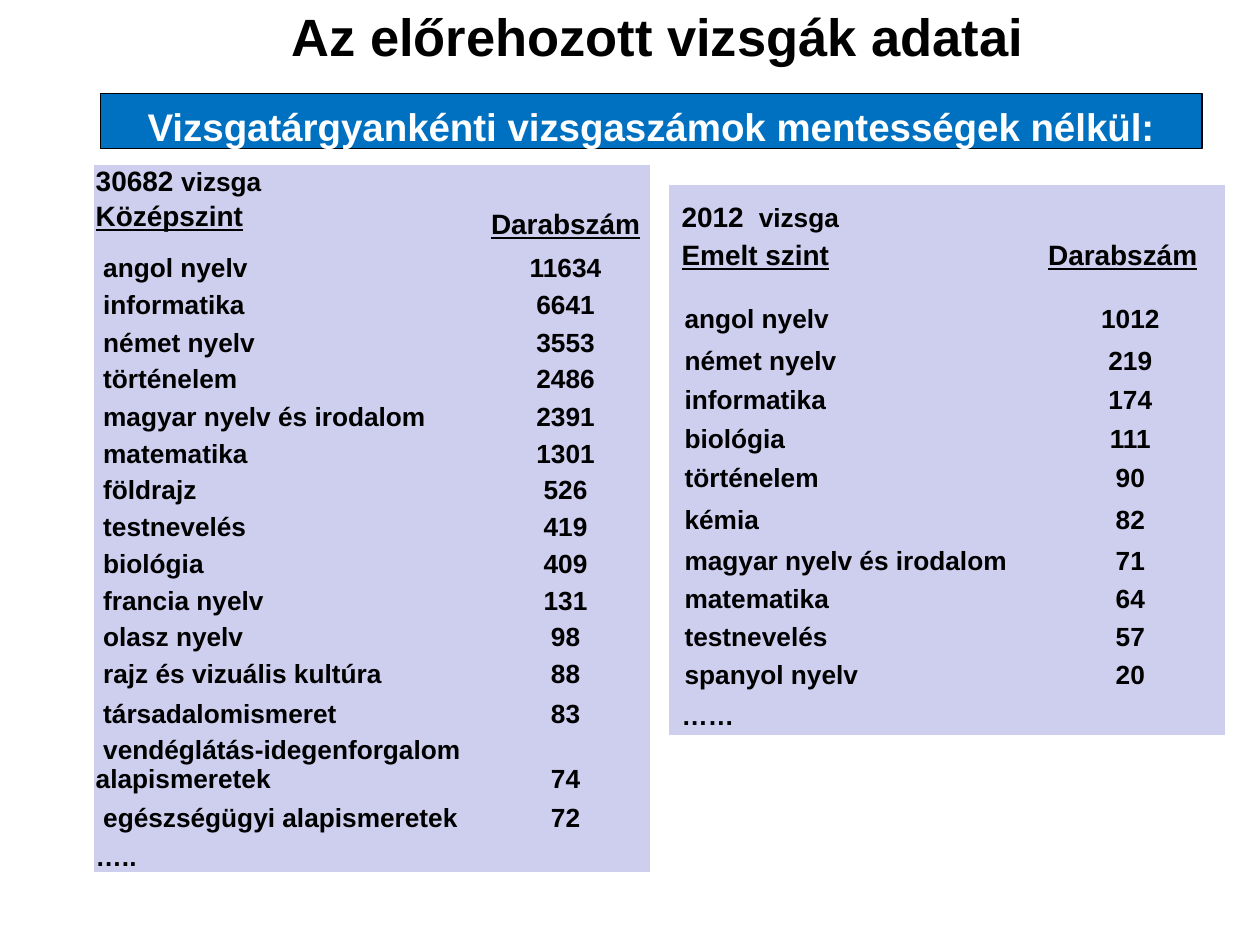
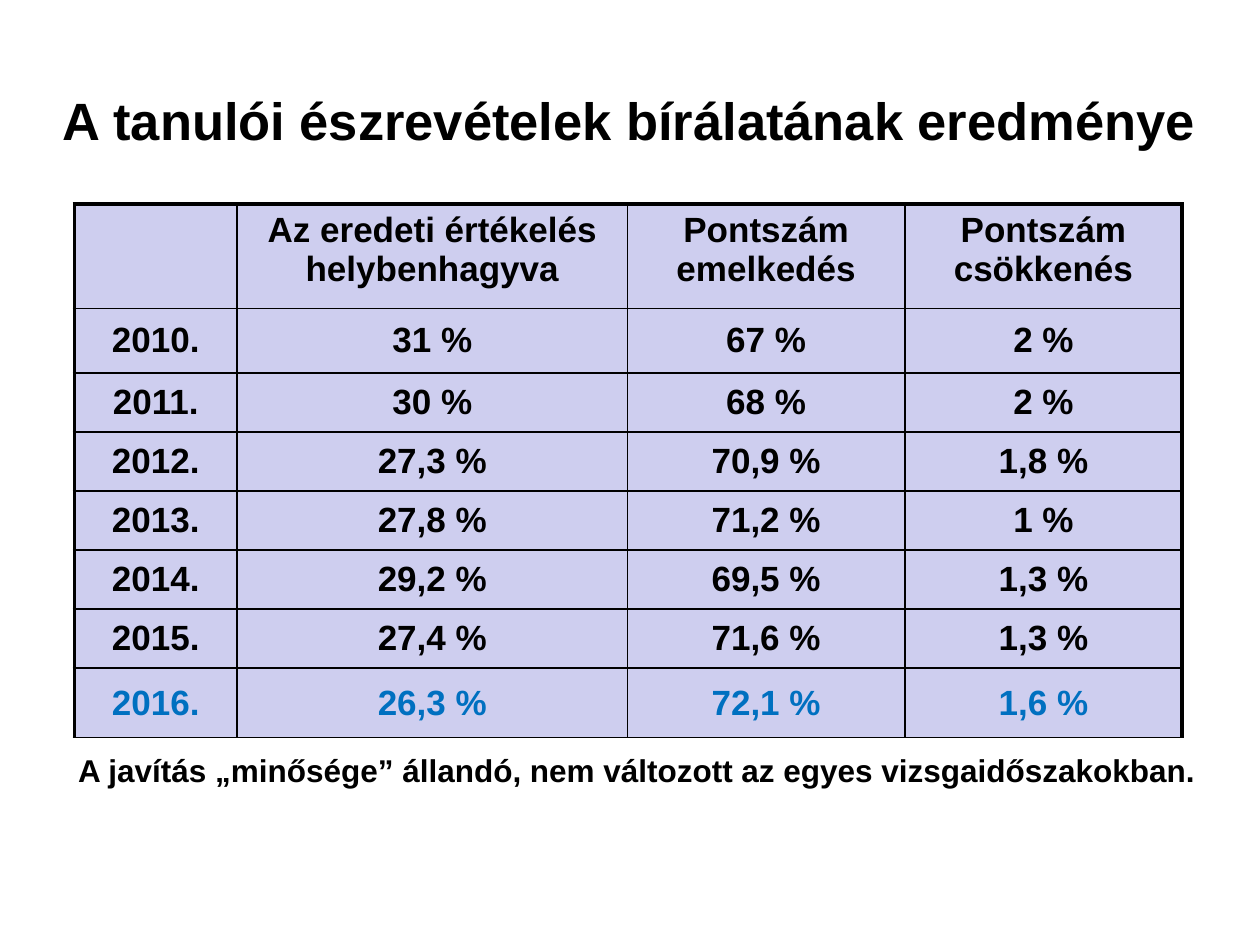
from lxml import etree
from pptx import Presentation
from pptx import util as u
from pptx.dml import color
from pptx.enum import shapes, text
from pptx.oxml import ns

COLORS = {"ink": "000000", "blue": "0070C0", "lilac": "CECEEF", "white": "FFFFFF"}
NO_STYLE = "{2D5ABB26-0587-4C30-8999-92F81FD0307C}"
CENTER = text.PP_ALIGN.CENTER
LEFT = text.PP_ALIGN.LEFT
TOP = text.MSO_ANCHOR.TOP
MIDDLE = text.MSO_ANCHOR.MIDDLE
BOTTOM = text.MSO_ANCHOR.BOTTOM
DEFAULT_INSETS = (0.25, 0.13, 0.25, 0.13)
TIGHT = (0.03, 0.03, 0.03, 0)


def rgb(name):
    return color.RGBColor.from_string(COLORS[name])


class Deck:
    font = "Arial"

    def __init__(self):
        self.prs = Presentation()
        self.prs.slide_width, self.prs.slide_height = u.Cm(25.4), u.Cm(19.05)
        self.s = None

    def slide(self):
        self.s = self.prs.slides.add_slide(self.prs.slide_layouts[6])

    def run(self, p, words, size, ink="ink", underline=False):
        r = p.add_run()
        r.text = words
        f = r.font
        f.name, f.size, f.bold = self.font, u.Pt(size), True
        f.color.rgb = rgb(ink)
        if underline:
            f.underline = True

    def line(self, p, words, size, ink="ink", align=CENTER, underline=False):
        p.alignment = align
        self.run(p, words, size, ink, underline)

    def textbox(self, box, words, size, anchor=TOP, spacing=None):
        tf = self.s.shapes.add_textbox(*map(u.Cm, box)).text_frame
        tf.word_wrap = True
        tf.vertical_anchor = anchor
        p = tf.paragraphs[0]
        p.line_spacing = spacing
        self.line(p, words, size)

    def title(self, box, words):
        self.textbox(box, words, 30, MIDDLE)

    def banner(self, box, words):
        sp = self.s.shapes.add_shape(shapes.MSO_SHAPE.RECTANGLE, *map(u.Cm, box))
        sp.shadow.inherit = False
        sp.fill.solid()
        sp.fill.fore_color.rgb = rgb("blue")
        sp.line.color.rgb = rgb("ink")
        sp.line.width = u.Pt(0.75)
        tf = sp.text_frame
        tf.word_wrap = True
        tf.vertical_anchor = TOP
        tf.margin_top = u.Cm(0.2)
        self.line(tf.paragraphs[0], words, 22, "white")

    def table(self, x, y, widths, heights):
        frame = self.s.shapes.add_table(
            len(heights), len(widths), u.Cm(x), u.Cm(y),
            u.Cm(sum(widths)), u.Cm(sum(heights)))
        tbl = frame.table
        tbl.first_row = tbl.horz_banding = False
        tbl._tbl.tblPr.find(ns.qn("a:tableStyleId")).text = NO_STYLE
        for column, width in zip(tbl.columns, widths):
            column.width = u.Cm(width)
        for row, height in zip(tbl.rows, heights):
            row.height = u.Cm(height)
        for cell in tbl.iter_cells():
            cell.fill.solid()
            cell.fill.fore_color.rgb = rgb("lilac")
            self.cell(cell, TIGHT, BOTTOM)
        return tbl

    def cell(self, cell, insets, anchor):
        cell.margin_left, cell.margin_top, cell.margin_right, cell.margin_bottom = map(u.Cm, insets)
        cell.vertical_anchor = anchor
        return cell.text_frame.paragraphs[0]

    def borders(self, cell, widths):
        tc_pr = cell._tc.get_or_add_tcPr()
        for i, (side, width) in enumerate(zip("LRTB", widths)):
            ln = etree.Element(ns.qn(f"a:ln{side}"), w=str(u.Pt(width)))
            fill = etree.SubElement(ln, ns.qn("a:solidFill"))
            etree.SubElement(fill, ns.qn("a:srgbClr"), val=COLORS["ink"])
            tc_pr.insert(i, ln)

    def subject_rows(self, tbl, first, subjects, indent):
        for i, (subject, count) in enumerate(subjects, first):
            name, number = tbl.cell(i, 0), tbl.cell(i, 1)
            name.margin_left = u.Cm(0.03 + indent)
            tf = name.text_frame
            for j, part in enumerate(subject.split("\n")):
                p = tf.add_paragraph() if j else tf.paragraphs[0]
                self.line(p, part, 15, align=LEFT)
            if j:
                name.margin_left = u.Cm(0.03)
                tf.paragraphs[0]._p.get_or_add_pPr().set("indent", str(u.Cm(indent)))
            self.line(number.text_frame.paragraphs[0], str(count), 15)

    def advanced_level(self, subjects):
        heights = [1.83, 1.17, 0.84, 0.79, 0.79, 0.79, 0.84, 0.84, 0.76, 0.76, 0.76, 0.91]
        tbl = self.table(13.49, 3.73, [7.39, 3.81], heights)
        p = self.cell(tbl.cell(0, 0), DEFAULT_INSETS, BOTTOM)
        self.line(p, "2012 ", 16, align=LEFT)
        self.run(p, " vizsga", 15)
        level = tbl.cell(0, 0).text_frame.add_paragraph()
        level.space_before = u.Pt(11)
        self.line(level, "Emelt szint", 16, align=LEFT, underline=True)
        count = self.cell(tbl.cell(0, 1), DEFAULT_INSETS, BOTTOM)
        self.line(count, "Darabszám", 16, align=LEFT, underline=True)
        for heading in (p, level, count):
            heading.line_spacing = 0.6
        self.subject_rows(tbl, 1, subjects, 0.28)
        p = self.cell(tbl.cell(len(heights) - 1, 0), DEFAULT_INSETS, BOTTOM)
        p.line_spacing = 0.45
        self.line(p, "……", 15, align=LEFT)

    def middle_level(self, subjects):
        heights = [0.61, 0.81, 0.86] + [0.74, 0.76] * 2 + [0.74] * 7 + [0.81, 0.74, 0.79, 0.79]
        tbl = self.table(1.9, 3.33, [7.8, 3.4], heights)
        tbl.cell(0, 1).merge(tbl.cell(1, 1))
        p = self.cell(tbl.cell(0, 0), TIGHT, TOP)
        self.line(p, "30682 ", 16, align=LEFT)
        self.run(p, "vizsga", 15)
        p = self.cell(tbl.cell(1, 0), TIGHT, TOP)
        self.line(p, "Középszint", 16, align=LEFT, underline=True)
        self.line(tbl.cell(0, 1).text_frame.paragraphs[0], "Darabszám", 16, underline=True)
        self.subject_rows(tbl, 2, subjects, 0.15)
        last = tbl.cell(len(heights) - 1, 0)
        self.line(last.text_frame.paragraphs[0], "…..", 15, align=LEFT)

    def review_grid(self, headings, years):
        rows = [headings] + [(f"{year}.", *(f"{v} %" for v in values)) for year, *values in years]
        heights = [2.11, 1.3] + [1.19] * 5 + [1.4]
        tbl = self.table(1.5, 4.11, [3.28, 7.87, 5.59, 5.59], heights)
        for i, row in enumerate(rows):
            for j, words in enumerate(row):
                cell = tbl.cell(i, j)
                p = self.cell(cell, DEFAULT_INSETS, MIDDLE if i else TOP)
                if words:
                    self.line(p, words, 20, "blue" if i == len(rows) - 1 else "ink")
                self.borders(cell, (2.25 if j == 0 else 1, 2.25 if j == len(row) - 1 else 1,
                                    2.25 if i == 0 else 1, 1))


ADVANCED = [
    ("angol nyelv", 1012), ("német nyelv", 219), ("informatika", 174),
    ("biológia", 111), ("történelem", 90), ("kémia", 82),
    ("magyar nyelv és irodalom", 71), ("matematika", 64),
    ("testnevelés", 57), ("spanyol nyelv", 20),
]
MIDDLE_LEVEL = [
    ("angol nyelv", 11634), ("informatika", 6641), ("német nyelv", 3553),
    ("történelem", 2486), ("magyar nyelv és irodalom", 2391),
    ("matematika", 1301), ("földrajz", 526), ("testnevelés", 419),
    ("biológia", 409), ("francia nyelv", 131), ("olasz nyelv", 98),
    ("rajz és vizuális kultúra", 88), ("társadalomismeret", 83),
    ("vendéglátás-idegenforgalom\nalapismeretek", 74),
    ("egészségügyi alapismeretek", 72),
]
REVIEW_HEADINGS = ("", "Az eredeti értékelés helybenhagyva",
                   "Pontszám emelkedés", "Pontszám csökkenés")
REVIEWS = [
    (2010, "31", "67", "2"),
    (2011, "30", "68", "2"),
    (2012, "27,3", "70,9", "1,8"),
    (2013, "27,8", "71,2", "1"),
    (2014, "29,2", "69,5", "1,3"),
    (2015, "27,4", "71,6", "1,3"),
    (2016, "26,3", "72,1", "1,6"),
]


def main():
    deck = Deck()
    deck.slide()
    deck.title((3.3, -0.28, 19.91, 1.98), "Az előrehozott vizsgák adatai")
    deck.banner((2.03, 1.88, 22.2, 1.12), "Vizsgatárgyankénti vizsgaszámok mentességek nélkül:")
    deck.advanced_level(ADVANCED)
    deck.middle_level(MIDDLE_LEVEL)

    deck.slide()
    deck.title((0.69, 1.52, 24, 1.8), "A tanulói észrevételek bírálatának eredménye")
    deck.textbox((0.89, 15.11, 23.9, 0.94),
                 "A javítás „minősége” állandó, nem változott az egyes vizsgaidőszakokban.",
                 18, spacing=0.9)
    deck.review_grid(REVIEW_HEADINGS, REVIEWS)
    deck.prs.save("out.pptx")


if __name__ == "__main__":
    main()
